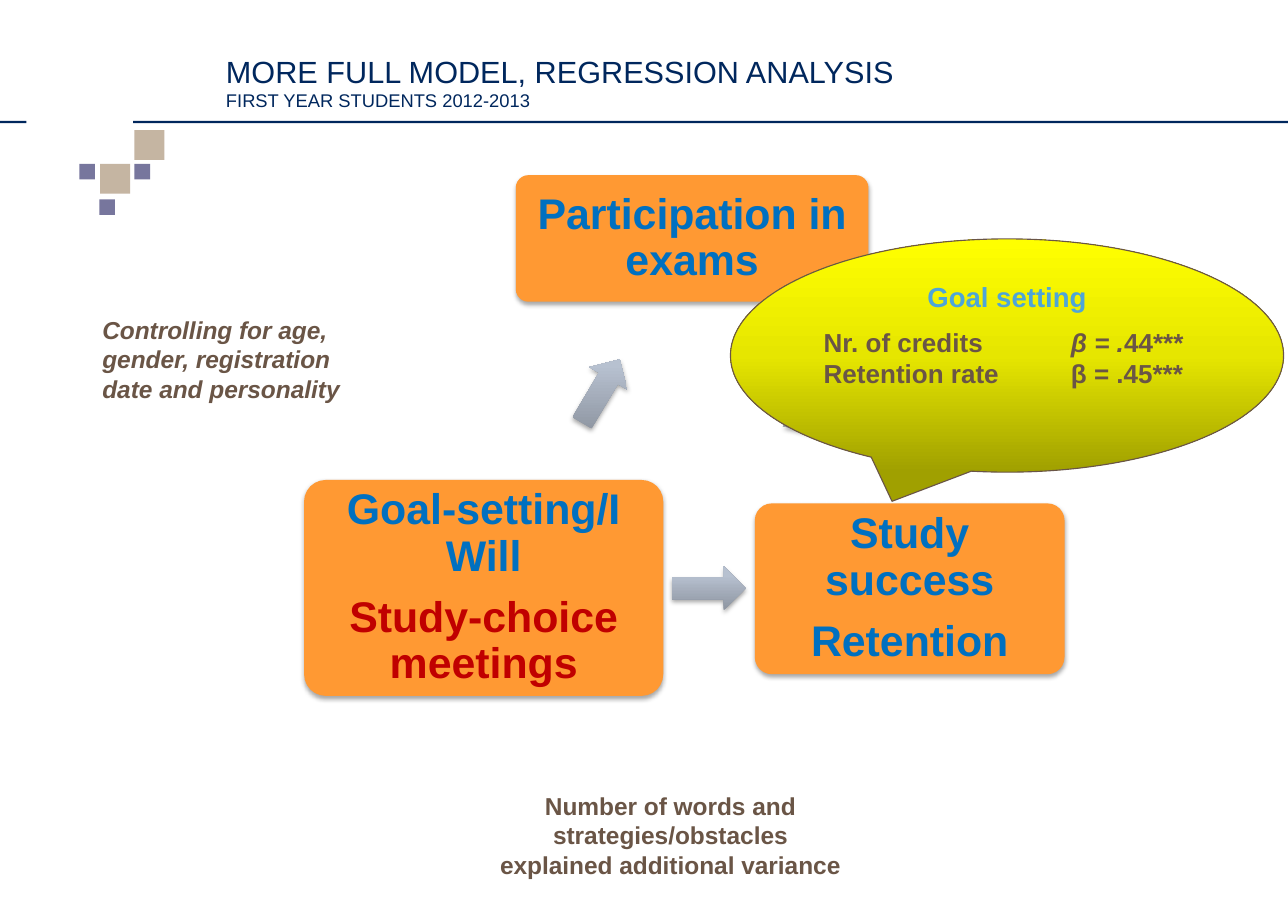
from lxml import etree
from pptx import Presentation
from pptx.dml.color import RGBColor
from pptx.enum.shapes import MSO_SHAPE as SHAPE
from pptx.enum.text import MSO_ANCHOR as ANCHOR, PP_ALIGN as ALIGN
from pptx.oxml.ns import qn
from pptx.util import Cm, Pt

NAVY = RGBColor(0x00, 0x27, 0x5D)
PURPLE = RGBColor(0x77, 0x76, 0x9D)
SAND = RGBColor(0xC5, 0xB5, 0xA2)
ORANGE = RGBColor(0xFF, 0x99, 0x33)
BLUE = RGBColor(0x00, 0x70, 0xC0)
RED = RGBColor(0xC0, 0x00, 0x00)
BROWN = RGBColor(0x6A, 0x55, 0x46)
SKY = RGBColor(0x4E, 0xA5, 0xD8)
BLACK = RGBColor(0x00, 0x00, 0x00)
STEEL = ((0, RGBColor(0x8D, 0x94, 0xA0)), (80, RGBColor(0xB7, 0xC1, 0xD0)),
         (100, RGBColor(0xB8, 0xC2, 0xD1)))
YELLOW = ((0, RGBColor(0xA0, 0xA0, 0x00)), (50, RGBColor(0xE6, 0xE6, 0x00)),
          (100, RGBColor(0xFF, 0xFF, 0x00)))


def add_run(p, text, size=16, color=BROWN, bold=True, italic=False):
    r = p.add_run()
    r.text = text
    r.font.name = "Arial"
    r.font.size = Pt(size)
    r.font.bold = bold
    r.font.italic = italic
    r.font.color.rgb = color


class Slide:
    """Holds the style and the current slide, and adds its elements."""

    def __init__(self, prs):
        self.shapes = prs.slides.add_slide(prs.slide_layouts[6]).shapes

    def shape(self, kind, box, fill):
        s = self.shapes.add_shape(kind, *map(Cm, box))
        s.shadow.inherit = False
        s.line.fill.background()
        if isinstance(fill, RGBColor):
            s.fill.solid()
            s.fill.fore_color.rgb = fill
        else:
            self.gradient(s, fill)
        return s

    def gradient(self, s, stops):
        s.fill.gradient()
        s.fill.gradient_angle = 90
        grad = s._element.spPr.find(qn("a:gradFill"))
        grad.set("rotWithShape", "0")
        gs_list = grad.find(qn("a:gsLst"))
        for gs in list(gs_list):
            gs_list.remove(gs)
        for pos, color in stops:
            gs = etree.SubElement(gs_list, qn("a:gs"), pos=str(pos * 1000))
            etree.SubElement(gs, qn("a:srgbClr"), val=str(color))

    def shadow(self, s):
        effects = s._element.spPr.find(qn("a:effectLst"))
        shadow = etree.SubElement(effects, qn("a:outerShdw"), blurRad=str(Pt(3.1)),
                                  dist=str(Pt(1.8)), dir="5400000", rotWithShape="0")
        color = etree.SubElement(shadow, qn("a:srgbClr"), val=str(BLACK))
        etree.SubElement(color, qn("a:alpha"), val="35000")

    def frame(self, s, insets, anchor=ANCHOR.TOP):
        tf = s.text_frame
        tf.word_wrap = True
        tf.vertical_anchor = anchor
        tf.margin_left = tf.margin_right = Cm(insets[0])
        tf.margin_top = tf.margin_bottom = Cm(insets[1])
        return tf

    def text(self, box, lines, align=ALIGN.LEFT, insets=(0.25, 0.13), anchor=ANCHOR.TOP):
        tf = self.frame(self.shapes.add_textbox(*map(Cm, box)), insets, anchor)
        for i, (line, style) in enumerate(lines):
            p = tf.add_paragraph() if i else tf.paragraphs[0]
            p.alignment = align
            add_run(p, line, **style)

    def box(self, box, lines):
        s = self.shape(SHAPE.ROUNDED_RECTANGLE, box, ORANGE)
        s.adjustments[0] = 0.1
        self.shadow(s)
        tf = self.frame(s, (0.4, 0.4), ANCHOR.MIDDLE)
        for i, (line, color) in enumerate(lines):
            p = tf.add_paragraph() if i else tf.paragraphs[0]
            p.alignment = ALIGN.CENTER
            p.line_spacing = 0.9
            p.space_after = Pt(9.8)
            add_run(p, line, size=28, color=color)

    def arrow(self, x, y, angle):
        s = self.shape(SHAPE.RIGHT_ARROW, (x, y, 1.7, 1.02), STEEL)
        s.rotation = angle
        self.shadow(s)

    def callout(self, box, title, rows):
        s = self.shape(SHAPE.OVAL_CALLOUT, box, YELLOW)
        s.adjustments[0], s.adjustments[1] = -0.208, 0.625
        s.line.color.rgb = BROWN
        s.line.width = Pt(0.75)
        tf = self.frame(s, (0.28, 0.15))
        p = tf.paragraphs[0]
        p.alignment = ALIGN.CENTER
        add_run(p, title, size=18, color=SKY)
        for i, (label, beta, value) in enumerate(rows):
            p = tf.add_paragraph()
            p.alignment = ALIGN.LEFT
            p.space_before = Pt(0 if i else 9.2)
            tabs = etree.SubElement(p._p.get_or_add_pPr(), qn("a:tabLst"))
            etree.SubElement(tabs, qn("a:tab"), pos=str(Cm(5.7)), algn="l")
            add_run(p, label + "\t", size=17)
            add_run(p, beta, size=17, italic=i == 0)
            add_run(p, value, size=17)


def main():
    prs = Presentation()
    prs.slide_width, prs.slide_height = Cm(29.69), Cm(21.01)
    slide = Slide(prs)

    for x, width in ((0, 0.61), (3.07, 26.62)):
        slide.shape(SHAPE.RECTANGLE, (x, 2.79, width, 0.05), NAVY)
    for x, y, side, color in ((1.83, 3.78, 0.36, PURPLE), (3.1, 3, 0.69, SAND),
                              (2.31, 3.78, 0.69, SAND), (2.29, 4.6, 0.36, PURPLE),
                              (3.1, 3.78, 0.36, PURPLE)):
        slide.shape(SHAPE.RECTANGLE, (x, y, side, side), color)

    heading = dict(color=NAVY, bold=False)
    slide.text((5.21, 0.79, 23.14, 1.78),
               [("MORE FULL MODEL, REGRESSION ANALYSIS", dict(heading, size=20)),
                ("FIRST YEAR STUDENTS 2012-2013", dict(heading, size=12))],
               insets=(0, 0), anchor=ANCHOR.BOTTOM)

    slide.box((11.89, 4.04, 8.13, 2.92), [("Participation in exams", BLUE)])
    slide.arrow(17.45, 8.76, 58.1)
    slide.box((17.4, 11.61, 7.14, 3.94), [("Study success", BLUE), ("Retention", BLUE)])
    slide.arrow(15.49, 13.06, 0)
    slide.box((7.01, 11.07, 8.28, 4.98),
              [("Goal-setting/I Will", BLUE), ("Study-choice meetings", RED)])
    slide.arrow(13, 8.51, 300.7)

    slide.text((2.11, 7.14, 7.01, 2.57),
               [("Controlling for age, gender, registration date and personality",
                 dict(italic=True))])
    slide.callout((16.84, 5.51, 12.75, 5.38), "Goal setting",
                  [("Nr. of credits", "β = .", "44***"),
                   ("Retention rate", "β = .", "45***")])
    slide.text((11.25, 18.11, 8.41, 1.6),
               [("Number of words and strategies/obstacles explained additional variance", {})],
               align=ALIGN.CENTER)
    prs.save("out.pptx")


if __name__ == "__main__":
    main()
